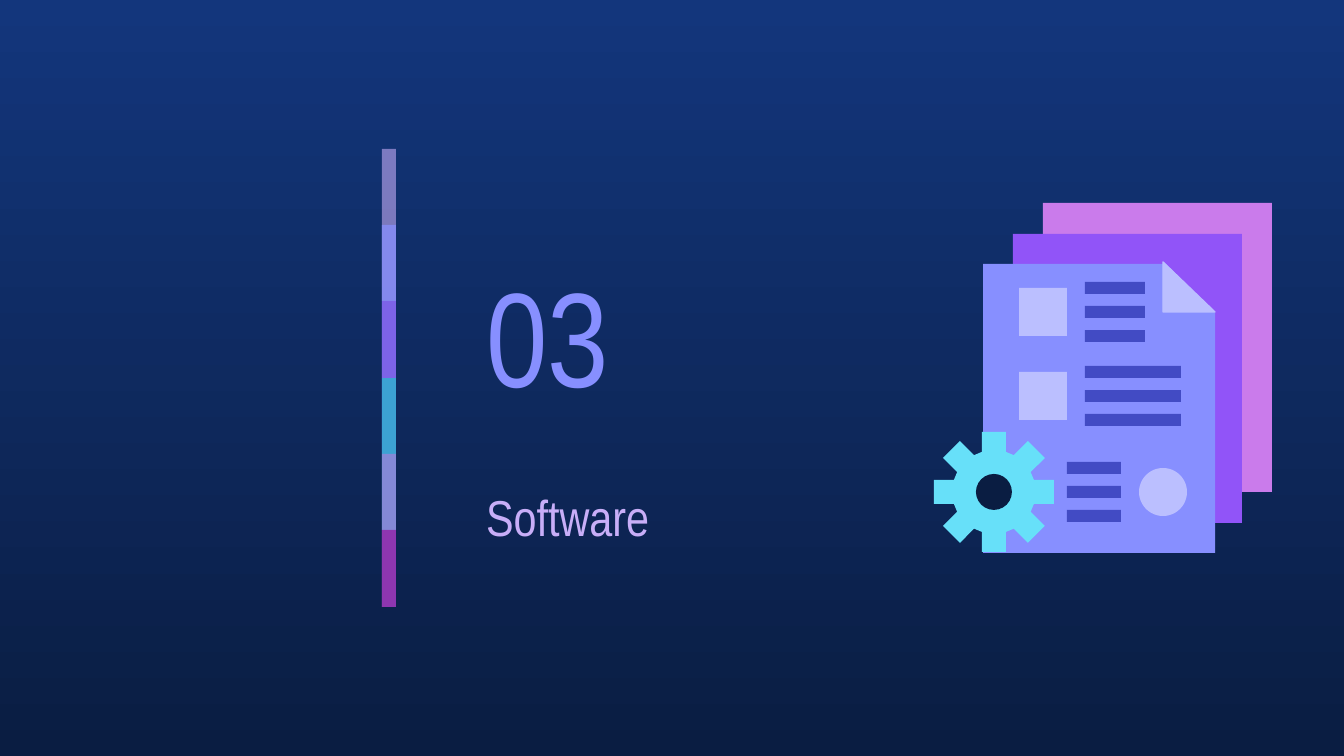
from math import cos, pi, sin

from lxml import etree
from pptx import Presentation
from pptx import util as u
from pptx.dml.color import RGBColor
from pptx.enum import shapes, text
from pptx.oxml.ns import qn

SCALE = 9144000 / 1344
FONT = "Arial Narrow"
ROYAL = RGBColor(0x13, 0x36, 0x7C)
NAVY = RGBColor(0x0A, 0x1D, 0x42)
LILAC = RGBColor(0xC8, 0xAE, 0xF8)
PERIWINKLE = RGBColor(0x87, 0x8F, 0xFF)
VIOLET = RGBColor(0x91, 0x54, 0xF8)
TEAL = RGBColor(0x35, 0xC2, 0xDF)
ORCHID = RGBColor(0xCA, 0x7B, 0xEB)
PURPLE = RGBColor(0x97, 0x2C, 0xB4)
CYAN = RGBColor(0x67, 0xE0, 0xF9)
PALE = RGBColor(0xBB, 0xBF, 0xFF)
INDIGO = RGBColor(0x42, 0x4B, 0xC4)

STRIPE = [(LILAC, 59), (PERIWINKLE, 74), (VIOLET, 53), (TEAL, 76), (ORCHID, 56), (PURPLE, 74)]
BACK_SHEET = [(1043, 203), (1043, 234), (1242, 234), (1242, 492), (1272, 492), (1272, 203)]
MIDDLE_SHEET = [(1013, 234), (1013, 264), (1164, 264), (1211, 312),
                (1211, 523), (1242, 523), (1242, 234)]
FRONT_SHEET = [(983, 264), (983, 553), (1215, 553), (1215, 313), (1166, 264)]
FOLD = [(1163, 262), (1163, 312), (1215, 312)]
TOOTH = [(-12, -40), (-12, -60), (12, -60), (12, -40)]
TEXT_LINES = [(1085, 282, 60), (1085, 366, 96), (1067, 462, 54)]


def px(length):
    return u.Emu(round(length * SCALE))


def paint(shape, colour, alpha=100):
    shape.shadow.inherit = False
    shape.fill.solid()
    shape.fill.fore_color.rgb = colour
    shape.line.fill.background()
    if alpha < 100:
        value = shape.fill._xPr.find(qn("a:solidFill"))[0]
        etree.SubElement(value, qn("a:alpha")).set("val", str(alpha * 1000))
    return shape


def add_preset(group, kind, left, top, width, height, colour, alpha=100):
    shape = group.shapes.add_shape(kind, px(left), px(top), px(width), px(height))
    return paint(shape, colour, alpha)


def add_outline(group, points, colour):
    corners = [(px(x), px(y)) for x, y in points]
    builder = group.shapes.build_freeform(*corners[0])
    builder.add_line_segments(corners[1:])
    return paint(builder.convert_to_shape(), colour)


def add_heading(page, words, left, top, width, height, size, colour):
    box = page.shapes.add_textbox(px(left), px(top), px(width), px(height))
    frame = box.text_frame
    frame.word_wrap = True
    frame.vertical_anchor = text.MSO_ANCHOR.MIDDLE
    frame.margin_left = frame.margin_right = u.Inches(0.1)
    frame.margin_top = frame.margin_bottom = u.Inches(0.1)
    frame.text = words
    font = frame.paragraphs[0].runs[0].font
    font.name, font.size = FONT, u.Pt(size)
    font.color.rgb = colour


def set_background(page):
    fill = page.background.fill
    fill.gradient()
    fill.gradient_angle = 270
    for stop, colour, position in zip(fill.gradient_stops, (ROYAL, NAVY), (0, 1)):
        stop.color.rgb = colour
        stop.position = position


def add_stripe(page):
    group = page.shapes.add_group_shape()
    top, bottom = 149, 607
    edges = [top + (bottom - top) * i // len(STRIPE) for i in range(len(STRIPE) + 1)]
    for i, (colour, alpha) in enumerate(STRIPE):
        end = edges[min(i + 2, len(STRIPE))]
        add_preset(group, shapes.MSO_SHAPE.RECTANGLE, 382, edges[i], 14, end - edges[i],
                   colour, alpha)


def gear_points(centre_x, centre_y, teeth=8):
    points = []
    for i in range(teeth):
        turn = 2 * pi * i / teeth
        for x, y in TOOTH:
            points.append((centre_x + x * cos(turn) - y * sin(turn),
                           centre_y + x * sin(turn) + y * cos(turn)))
    return points


def add_documents(page):
    group = page.shapes.add_group_shape()
    rectangle, oval = shapes.MSO_SHAPE.RECTANGLE, shapes.MSO_SHAPE.OVAL
    add_outline(group, BACK_SHEET, ORCHID)
    add_outline(group, MIDDLE_SHEET, VIOLET)
    add_outline(group, FRONT_SHEET, PERIWINKLE)
    add_outline(group, gear_points(994, 492), CYAN)
    add_preset(group, oval, 976, 474, 36, 36, NAVY)
    for top in (288, 372):
        add_preset(group, rectangle, 1019, top, 48, 48, PALE)
    add_preset(group, oval, 1139, 468, 48, 48, PALE)
    for left, top, width in TEXT_LINES:
        for row in range(3):
            add_preset(group, rectangle, left, top + 24 * row, width, 12, INDIGO)
    fold = add_outline(group, FOLD, PALE)
    fold.line.color.rgb = PALE
    fold.line.width = u.Pt(0.75)


def main():
    deck = Presentation()
    deck.slide_width, deck.slide_height = px(1344), px(756)
    page = deck.slides.add_slide(deck.slide_layouts[6])
    set_background(page)
    add_stripe(page)
    add_heading(page, "03", 473, 243, 235, 181, 72, PERIWINKLE)
    add_heading(page, "Software", 473, 458, 427, 117, 27, LILAC)
    add_documents(page)
    deck.save("out.pptx")


if __name__ == "__main__":
    main()
